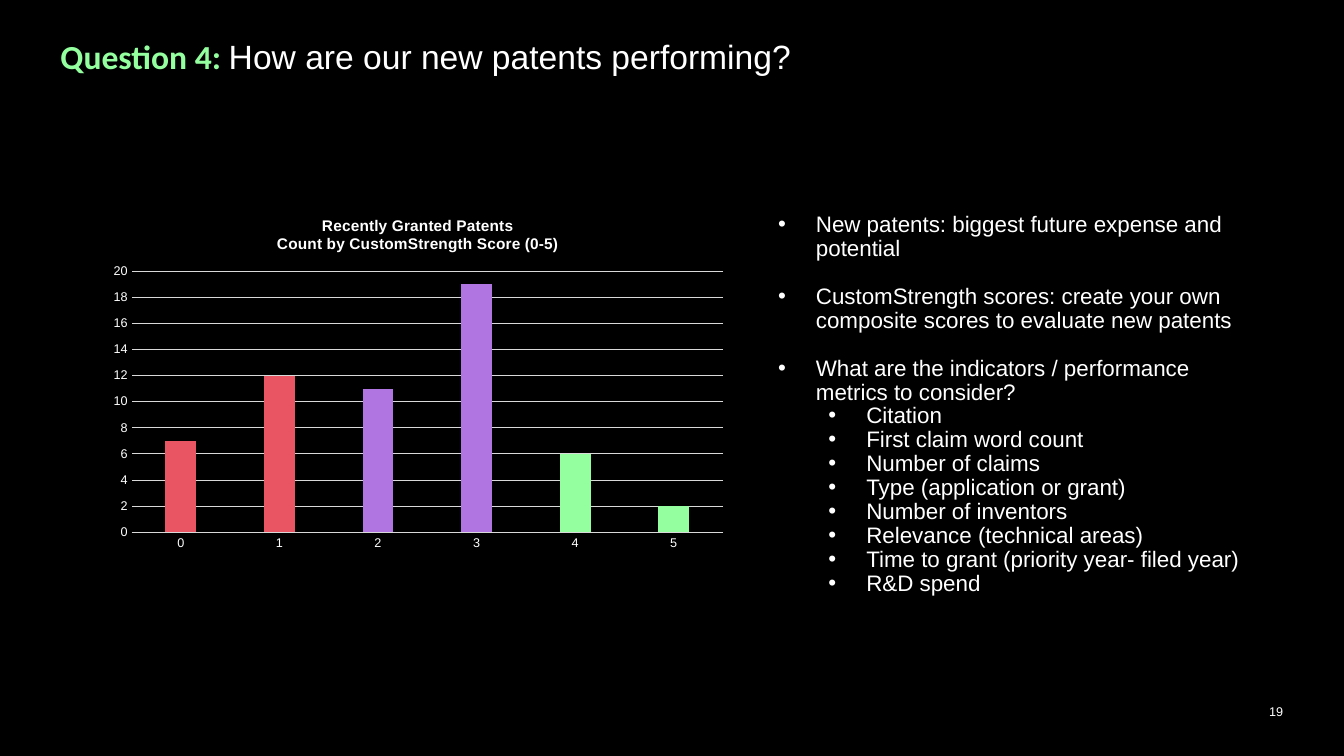
from lxml.etree import SubElement
from pptx import Presentation
from pptx.chart.data import CategoryChartData
from pptx.dml.color import RGBColor
from pptx.enum.chart import XL_CHART_TYPE as ChartType, XL_TICK_MARK as TickMark
from pptx.enum.text import MSO_ANCHOR as Anchor, MSO_AUTO_SIZE as AutoSize, PP_ALIGN as Align
from pptx.oxml import parse_xml
from pptx.oxml.ns import nsdecls, qn
from pptx.util import Pt

BLACK = RGBColor(0x00, 0x00, 0x00)
WHITE = RGBColor(0xFF, 0xFF, 0xFF)
GRAY = RGBColor(0xD9, 0xD9, 0xD9)
GREEN = RGBColor(0x93, 0xFF, 0x9E)
RED = RGBColor(0xEA, 0x55, 0x64)
PURPLE = RGBColor(0xB1, 0x75, 0xE1)

TOPICS = [
    "New patents: biggest future expense and potential",
    "CustomStrength scores: create your own composite scores to evaluate new patents",
    "What are the indicators / performance metrics to consider?",
]
METRICS = [
    "Citation",
    "First claim word count",
    "Number of claims",
    "Type (application or grant)",
    "Number of inventors",
    "Relevance (technical areas)",
    "Time to grant (priority year- filed year)",
    "R&D spend",
]
PATENT_COUNTS = [7, 12, 11, 19, 6, 2]
SCORE_COLORS = [RED, RED, PURPLE, PURPLE, GREEN, GREEN]


class PatentSlide:
    font = "Arial"
    color = WHITE

    def __init__(self, deck):
        self.page = deck.slides.add_slide(deck.slide_layouts[1])
        fill = self.page.background.fill
        fill.solid()
        fill.fore_color.rgb = BLACK

    def style(self, font, size, name=None, color=None, bold=False):
        font.name = name or self.font
        font.size = Pt(size)
        font.bold = bold
        font.color.rgb = color or self.color

    def span(self, para, text, size, **look):
        span = para.add_run()
        span.text = text
        self.style(span.font, size, **look)

    def frame(self, box, left, top, width, height, inset=(0, 0), anchor=Anchor.TOP):
        """Place a box and return its prepared text frame."""
        box.left, box.top, box.width, box.height = map(Pt, (left, top, width, height))
        frame = box.text_frame
        frame.margin_left = frame.margin_right = Pt(inset[0])
        frame.margin_top = frame.margin_bottom = Pt(inset[1])
        frame.word_wrap = True
        frame.auto_size = AutoSize.NONE
        frame.vertical_anchor = anchor
        return frame

    def title(self, label, question):
        frame = self.frame(self.page.shapes.title, 43.2, 28.8, 841.7, 20.2)
        para = frame.paragraphs[0]
        para.alignment = Align.LEFT
        para.line_spacing = 0.9
        self.span(para, label, 24, name="Calibri", color=GREEN, bold=True)
        self.span(para, question, 24)

    def bullets(self, items):
        """Fill the body with (text, level, space before) items."""
        frame = self.frame(self.page.placeholders[1], 548.6, 149, 357.1, 301, (7.2, 3.6))
        for index, (text, level, gap) in enumerate(items):
            para = frame.add_paragraph() if index else frame.paragraphs[0]
            para.level = level
            para.line_spacing = 0.89
            para.space_before = Pt(gap)
            para.space_after = Pt(0)
            props = para._p.get_or_add_pPr()
            props.set("marL", str(Pt(27 + 36 * level)))
            props.set("indent", str(Pt(-27)))
            SubElement(props, qn("a:buFont"), typeface="Arial")
            SubElement(props, qn("a:buChar"), char="•")
            self.span(para, text, 16)

    def page_number(self, number):
        box = self.page.shapes.add_textbox(0, 0, 0, 0)
        frame = self.frame(box, 906.5, 499.7, 17.3, 17.3, anchor=Anchor.MIDDLE)
        self.span(frame.paragraphs[0], number, 9)

    def column_chart(self, title_lines, values, colors):
        data = CategoryChartData()
        data.categories = [str(score) for score in range(len(values))]
        data.add_series("Series 1", values)
        chart = self.page.shapes.add_chart(
            ChartType.COLUMN_CLUSTERED, Pt(71.3), Pt(142.6), Pt(454.3), Pt(255.6), data).chart
        chart.has_legend = False
        self.style(chart.font, 10)

        title = chart.chart_title
        for index, line in enumerate(title_lines):
            frame = title.text_frame
            para = frame.add_paragraph() if index else frame.paragraphs[0]
            para.alignment = Align.CENTER
            self.span(para, line, 11, bold=True)
        title.include_in_layout = False
        title._element.find(qn("c:tx")).addnext(self.layout(x=0.28, y=0.05))

        plot = chart.plots[0]
        plot.gap_width, plot.overlap = 219, -27
        plot.vary_by_categories = False
        area = chart._chartSpace.chart.plotArea
        for old in area.findall(qn("c:layout")):
            area.remove(old)
        area.insert(0, self.layout("inner", x=0.05, y=0.2, w=0.93, h=0.73))

        for axis in (chart.category_axis, chart.value_axis):
            axis.major_tick_mark = axis.minor_tick_mark = TickMark.NONE
            self.style(axis.tick_labels.font, 9)
        scale = chart.value_axis
        scale.minimum_scale, scale.maximum_scale, scale.major_unit = 0, 20, 2
        scale.format.line.fill.background()
        for line in (chart.category_axis.format.line, scale.major_gridlines.format.line):
            line.color.rgb = GRAY
            line.width = Pt(0.75)

        series = plot.series[0]
        for index, color in enumerate(colors):
            fill = series.points[index].format.fill
            fill.solid()
            fill.fore_color.rgb = color

    @staticmethod
    def layout(target=None, **fractions):
        """Return a manual chart layout in fractions of the chart area."""
        parts = [f'<c:layoutTarget val="{target}"/>'] if target else []
        parts += [f'<c:{key}Mode val="edge"/>' for key in "xy"]
        parts += [f'<c:{key} val="{value}"/>' for key, value in fractions.items()]
        return parse_xml(f'<c:layout {nsdecls("c")}><c:manualLayout>'
                         f'{"".join(parts)}</c:manualLayout></c:layout>')


def main():
    deck = Presentation()
    deck.slide_width, deck.slide_height = Pt(960), Pt(540)
    slide = PatentSlide(deck)
    slide.title("Question 4: ", "How are our new patents performing?")
    slide.column_chart(["Recently Granted Patents", "Count by CustomStrength Score (0-5)"],
                       PATENT_COUNTS, SCORE_COLORS)
    topics = [(text, 0, 17 if index else 0) for index, text in enumerate(TOPICS)]
    slide.bullets(topics + [(text, 1, 0) for text in METRICS])
    slide.page_number("19")
    deck.save("out.pptx")


if __name__ == "__main__":
    main()
